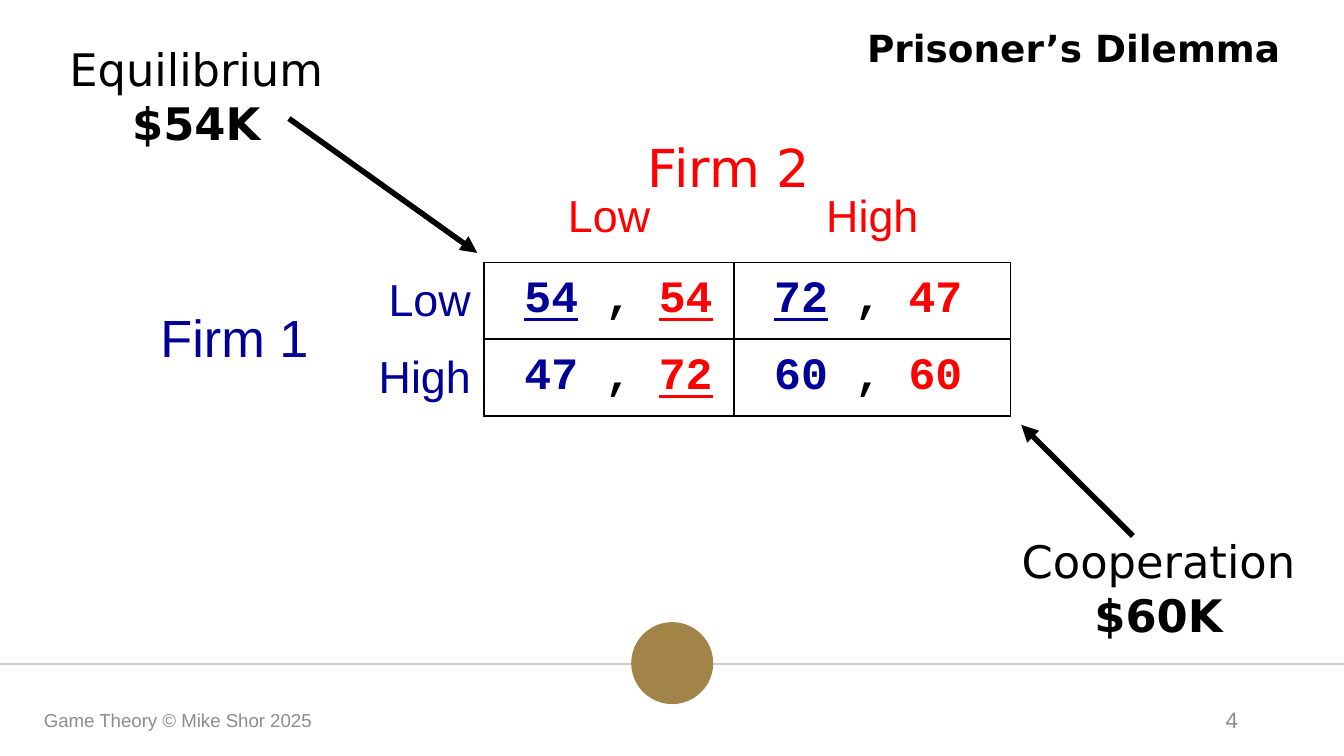
from pptx import Presentation
from pptx.util import Cm, Pt
from pptx.dml.color import RGBColor as RGB
from pptx.enum.shapes import MSO_SHAPE as Shape, MSO_CONNECTOR as Link
from pptx.enum.text import PP_ALIGN as Align, MSO_ANCHOR as Anchor
from pptx.oxml.ns import qn
from lxml.etree import SubElement as sub, Element

RED, BLUE, BLACK, GRAY = "FF0000", "000099", "000000", "8C8C8C"
SANS, ARIAL, MONO = "DejaVu Sans", "Arial", "Courier New"
LEFT, MID, RIGHT = Align.LEFT, Align.CENTER, Align.RIGHT

# Each paragraph is a list of runs: (text, format)
big = {"name": SANS, "size": 24, "color": BLACK}
bold = big | {"bold": True}
foot = {"name": ARIAL, "size": 10, "color": GRAY}
firm = {"name": ARIAL, "size": 28, "color": BLUE}
row = firm | {"size": 24}
col = row | {"color": RED}
pay = {"name": MONO, "size": 24, "bold": True}

# left, top, width, height in cm; alignment; anchor; paragraphs
TEXTS = [
    ((10.31, 2.44, 6.93, 3.25), MID, Anchor.TOP,
     [[("Firm 2", {"name": SANS, "size": 28, "color": RED})]]),
    ((0.99, 0.66, 5.44, 2.31), MID, Anchor.TOP,
     [[("Equilibrium ", big)], [("$54K", bold)]]),
    ((18.95, 9.96, 5.89, 2.31), MID, Anchor.TOP,
     [[("Cooperation", big)], [("$60K", bold)]]),
    ((15.75, 0.36, 9.09, 1.22), MID, Anchor.TOP,
     [[("Prisoner’s Dilemma", bold | {"size": 20})]]),
    ((17.93, 13.23, 5.72, 0.76), RIGHT, Anchor.MIDDLE,
     [[("4", foot | {"size": 12})]]),
    ((0.58, 13.23, 8.59, 0.76), LEFT, Anchor.MIDDLE,
     [[("Game Theory © Mike Shor 2025", foot)]]),
]
ARROWS = [(5.46, 2.24, 9.02, 4.78), (21.41, 10.13, 19.3, 8.03)]

MOVES = ["Low", "High"]
# (payoff, best reply?) for firm 1 and firm 2
GAME = [
    [((54, True), (54, True)), ((72, True), (47, False))],
    [((47, False), (72, True)), ((60, False), (60, False))],
]
COLS, ROW = [4.17, 3.07, 4.72, 5.23], 1.45


def write(frame, align, paras):
    for i, runs in enumerate(paras):
        para = frame.paragraphs[0] if i == 0 else frame.add_paragraph()
        para.alignment = align
        for text, form in runs:
            run = para.add_run()
            run.text = text
            for key, val in form.items():
                if key == "color":
                    run.font.color.rgb = RGB.from_string(val)
                else:
                    setattr(run.font, key, Pt(val) if key == "size" else val)


def line(x1, y1, x2, y2, color, width):
    link = slide.shapes.add_connector(Link.STRAIGHT, Cm(x1), Cm(y1), Cm(x2), Cm(y2))
    link.line.color.rgb = RGB.from_string(color)
    link.line.width = Pt(width)
    sub(link.element.spPr, qn("a:effectLst"))
    return link


def edge(cell, r, c):
    """Draw only the sides that touch the payoff grid."""
    sides = {"L": r > 0 and c > 1, "R": r > 0 and c > 0,
             "T": r > 0 and c > 1, "B": c > 1}
    props = cell._tc.get_or_add_tcPr()
    for i, (side, on) in enumerate(sides.items()):
        ln = Element(qn("a:ln" + side), w=str(Pt(1)))
        if on:
            sub(sub(ln, qn("a:solidFill")), qn("a:srgbClr"), val=BLACK)
        else:
            sub(ln, qn("a:noFill"))
        props.insert(i, ln)


def duel(one, two):
    """Runs for a pair of payoffs; best replies are underlined."""
    (a, best_a), (b, best_b) = one, two
    return [(str(a), pay | {"color": BLUE, "underline": best_a}),
            (" , ", pay | {"color": BLACK}),
            (str(b), pay | {"color": RED, "underline": best_b})]


deck = Presentation()
deck.slide_width, deck.slide_height = Cm(25.4), Cm(14.29)
slide = deck.slides.add_slide(deck.slide_layouts[6])

line(-0.03, 12.55, 25.43, 12.55, "CCCCCC", 0.75)
dot = slide.shapes.add_shape(Shape.OVAL, Cm(11.93), Cm(11.76), Cm(1.55), Cm(1.55))
dot.shadow.inherit = False
dot.fill.solid()
dot.fill.fore_color.rgb = RGB.from_string("A28448")
dot.line.fill.background()

grid = slide.shapes.add_table(3, 4, Cm(1.91), Cm(3.51),
                              Cm(sum(COLS)), Cm(3 * ROW)).table
grid.first_row = grid.horz_banding = False
for c, wide in enumerate(COLS):
    grid.columns[c].width = Cm(wide)
for r in range(3):
    grid.rows[r].height = Cm(ROW)
    for c in range(4):
        cell = grid.cell(r, c)
        cell.fill.background()
        cell.vertical_anchor = Anchor.MIDDLE if r else Anchor.TOP
        edge(cell, r, c)
grid.cell(1, 0).merge(grid.cell(2, 0))
write(grid.cell(1, 0).text_frame, RIGHT, [[("Firm 1", firm)]])
for i, move in enumerate(MOVES):
    write(grid.cell(0, i + 2).text_frame, MID, [[(move, col)]])
    write(grid.cell(i + 1, 1).text_frame, RIGHT, [[(move, row)]])
    for j, pair in enumerate(GAME[i]):
        cell = grid.cell(i + 1, j + 2)
        cell.margin_left = Cm(0.76)
        write(cell.text_frame, LEFT, [duel(*pair)])

for ends in ARROWS:
    link = line(*ends, BLACK, 3)
    sub(link.line._get_or_add_ln(), qn("a:tailEnd"), type="triangle")

for place, align, anchor, paras in TEXTS:
    frame = slide.shapes.add_textbox(*map(Cm, place)).text_frame
    frame.word_wrap = True
    frame.vertical_anchor = anchor
    write(frame, align, paras)

deck.save("out.pptx")
